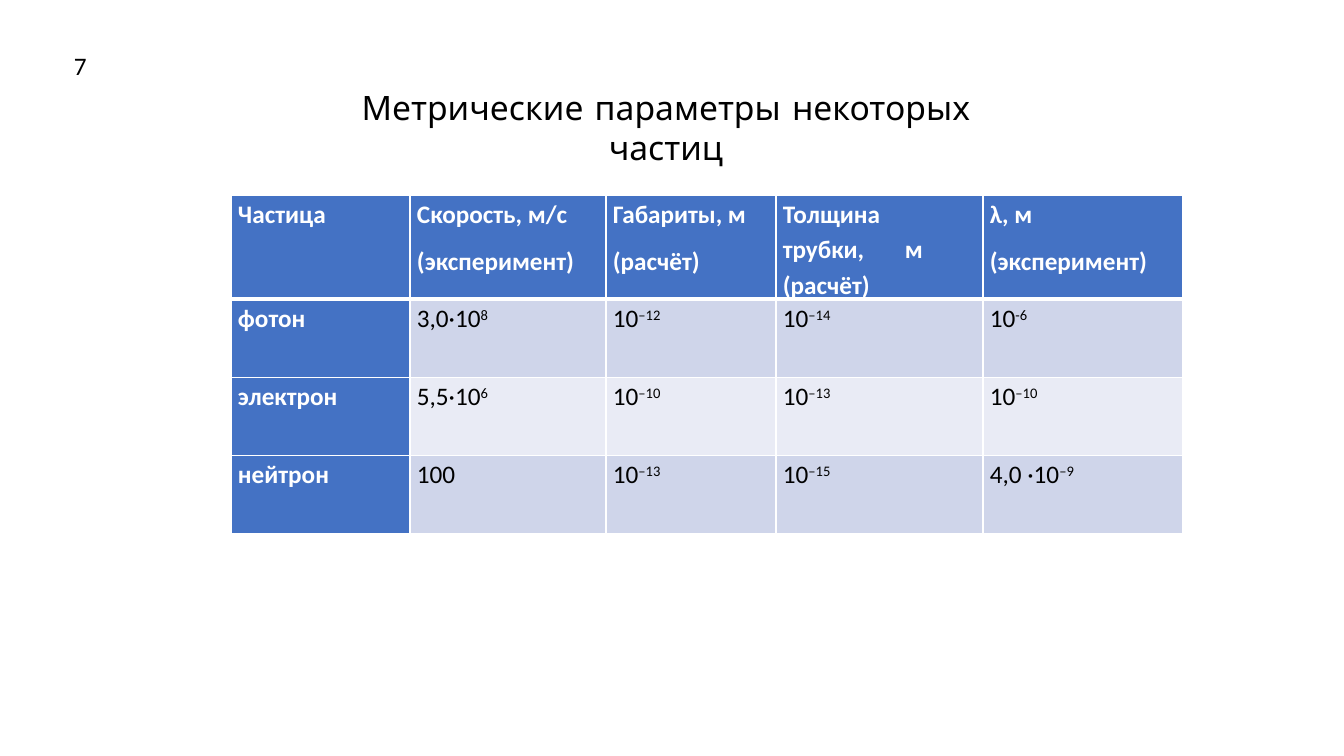
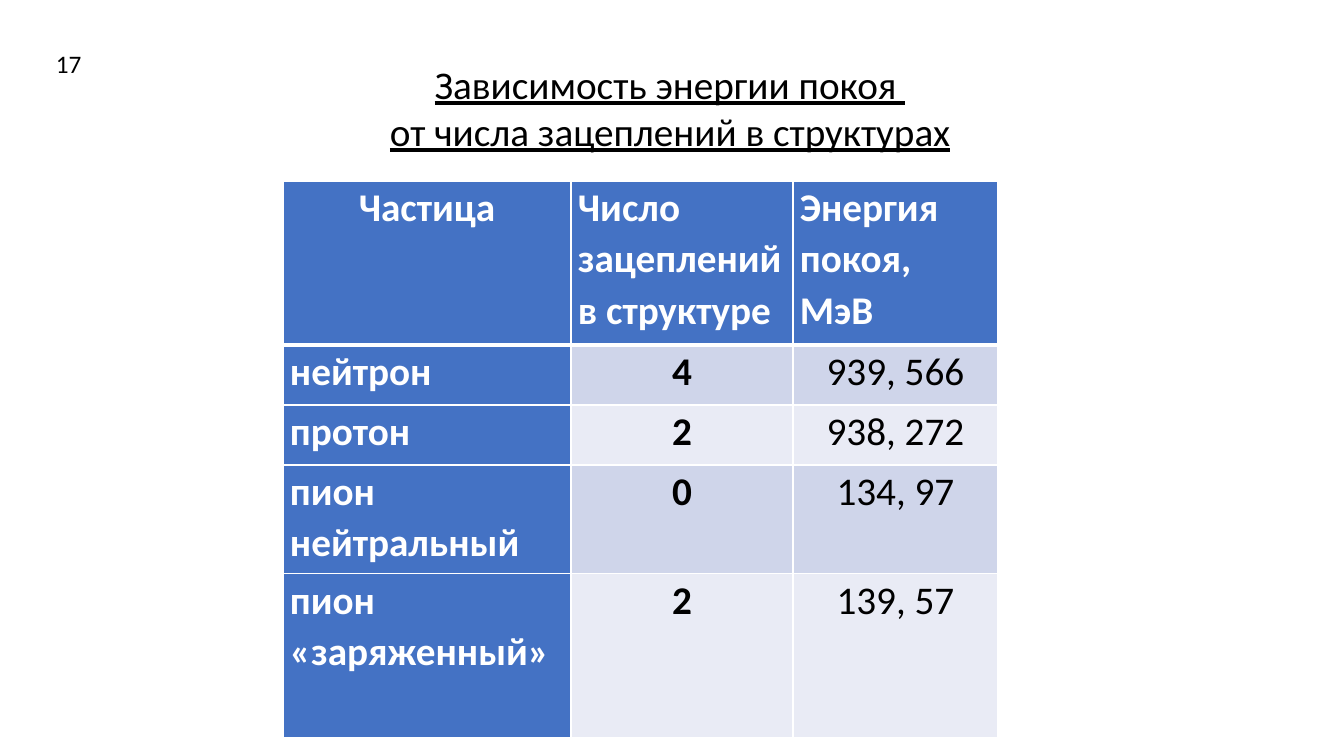
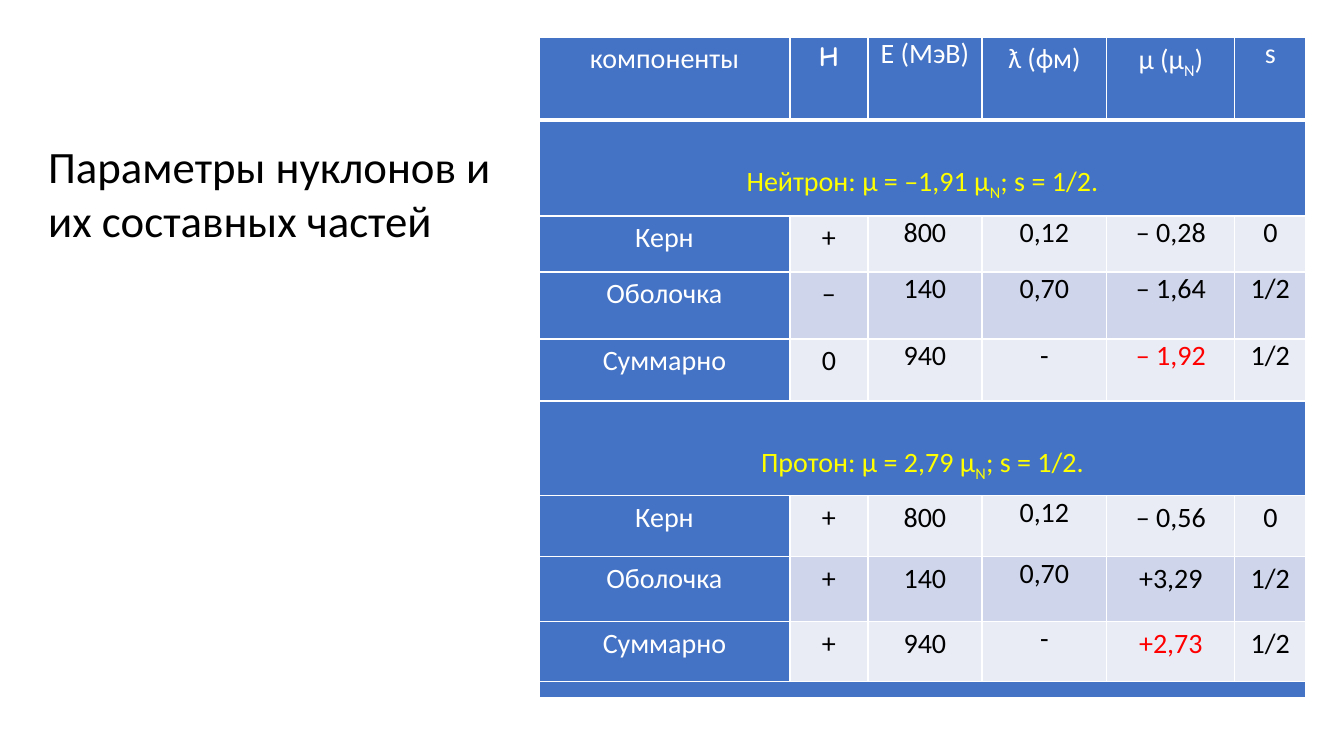
from lxml.etree import SubElement
from pptx import Presentation
from pptx.dml.color import RGBColor
from pptx.enum.text import MSO_ANCHOR, MSO_AUTO_SIZE, PP_ALIGN
from pptx.oxml import parse_xml
from pptx.oxml.ns import nsdecls, qn
from pptx.util import Pt

WHITE = RGBColor(0xFF, 0xFF, 0xFF)
BLACK = RGBColor(0x00, 0x00, 0x00)
BLUE = RGBColor(0x44, 0x72, 0xC4)
DARK_STRIPE = RGBColor(0xCF, 0xD5, 0xEA)
LIGHT_STRIPE = RGBColor(0xE9, 0xEB, 0xF5)
YELLOW = RGBColor(0xFF, 0xFF, 0x00)
RED = RGBColor(0xFF, 0x00, 0x00)

SANS, COMIC = "Calibri", "Comic Neue"
LEFT, CENTER, JUSTIFY = PP_ALIGN.LEFT, PP_ALIGN.CENTER, PP_ALIGN.JUSTIFY
EMU_PER_PX = 914400 / 100.8
SLIDE_SIZE = 1344, 756

# Content: braces mark raised or lowered text, "\n" starts a paragraph.
# A row with a single entry spans the whole table.
# Overrides are (rows, columns, formats); later ones win.
SLIDES = [
    {
        "title": "Метрические параметры некоторых частиц",
        "title_at": (297, 82, 738, 50),
        "title_format": {"name": COMIC, "size": 24, "alignment": CENTER},
        "number": "7",
        "number_at": (64, 45, 33, 40),
        "table_at": (231, 195),
        "columns": (179, 196, 170, 207, 200),
        "heights": (104, 78, 78, 78),
        "rows": [
            ("Частица", "Скорость, м/с\n(эксперимент)", "Габариты, м\n(расчёт)",
             "Толщина трубки, м (расчёт)", "λ, м\n(эксперимент)"),
            ("фотон", "3,0·10{8}", "10{–12}", "10{–14}", "10{-6}"),
            ("электрон", "5,5·10{6}", "10{–10}", "10{–13}", "10{–10}"),
            ("нейтрон", "100", "10{–13}", "10{–15}", "4,0 ·10{–9}"),
        ],
        "shift": 30,
        "margin": 7,
        "cell_format": {"size": 18, "alignment": JUSTIFY,
                        "line_spacing": 1.15, "space_after": Pt(8)},
        "overrides": [
            ([0], range(5), {"bold": True}),
            (range(4), [0], {"bold": True}),
            ([0], [3], {"margin_right": 60}),
        ],
    },
    {
        "title": "Зависимость энергии покоя \nот числа зацеплений в структурах",
        "title_at": (86, 55, 1168, 105),
        "title_format": {"size": 28, "underline": True, "alignment": CENTER},
        "number": "17",
        "number_at": (46, 43, 46, 40),
        "table_at": (283, 181),
        "columns": (288, 222, 205),
        "heights": (164, 60, 60, 109, 164),
        "rows": [
            ("Частица", "Число зацеплений в структуре", "Энергия покоя, МэВ"),
            ("нейтрон", "4", "939, 566"),
            ("протон", "2", "938, 272"),
            ("пион нейтральный", "0", "134, 97"),
            ("пион «заряженный»", "2", "139, 57"),
        ],
        "shift": 0,
        "margin": 7,
        "cell_format": {"size": 28, "bold": True, "alignment": CENTER,
                        "line_spacing": 1.07, "space_after": Pt(8)},
        "overrides": [
            ([0], [1, 2], {"alignment": LEFT}),
            (range(1, 5), [0], {"alignment": LEFT}),
            (range(1, 5), [2], {"bold": False}),
        ],
    },
    {
        "title": "Параметры нуклонов и\nих составных частей",
        "title_at": (38, 134, 476, 119),
        "title_format": {"size": 32, "alignment": LEFT},
        "table_at": (539, 37),
        "columns": (251, 78, 114, 125, 128, 71),
        "heights": (83, 96, 56, 67, 62, 95, 61, 65, 60, 16),
        "rows": [
            ("компоненты", "H", "Е (МэВ)", "ƛ (фм)", "μ (μ{N})", "s"),
            ("Нейтрон: μ = –1,91 μ{N}; s = 1/2.",),
            ("Керн", "+", "800", "0,12", "– 0,28", "0"),
            ("Оболочка", "–", "140", "0,70", "– 1,64", "1/2"),
            ("Суммарно", "0", "940", "-", "– 1,92", "1/2"),
            ("Протон: μ = 2,79 μ{N}; s = 1/2.",),
            ("Керн", "+", "800", "0,12", "– 0,56", "0"),
            ("Оболочка", "+", "140", "0,70", "+3,29", "1/2"),
            ("Суммарно", "+", "940", "-", "+2,73", "1/2"),
            ("",),
        ],
        "shift": -25,
        "margin": 4,
        "cell_format": {"size": 20, "alignment": CENTER, "line_spacing": 1.15},
        "overrides": [
            ([0], [1], {"name": COMIC, "bold": True}),
            ([0], [2, 5], {"line_spacing": 1.0}),
            ([1, 5], [0], {"color": YELLOW, "margin_top": 39}),
            (range(2, 5), range(2, 6), {"line_spacing": 1.0}),
            (range(6, 9), [3], {"line_spacing": 1.0}),
            ([4, 8], [4], {"color": RED}),
        ],
    },
]

TEXT_DEFAULTS = {"name": SANS, "size": 18, "bold": False, "color": BLACK}
PARAGRAPH_KEYS = ("alignment", "line_spacing", "space_after")
FONT_KEYS = ("name", "size", "bold", "underline")


def emu(px):
    return round(px * EMU_PER_PX)


def write(frame, text, formats, shift=0):
    """Fill a text frame, one paragraph per line."""
    formats = {**TEXT_DEFAULTS, **formats}
    formats["size"] = Pt(formats["size"])
    for i, line in enumerate(text.split("\n")):
        paragraph = frame.paragraphs[0] if i == 0 else frame.add_paragraph()
        for key in PARAGRAPH_KEYS:
            if key in formats:
                setattr(paragraph, key, formats[key])
        for j, piece in enumerate(line.replace("}", "{").split("{")):
            if not piece:
                continue
            run = paragraph.add_run()
            run.text = piece
            for key in FONT_KEYS:
                if key in formats:
                    setattr(run.font, key, formats[key])
            run.font.color.rgb = formats["color"]
            if j % 2:
                run._r.get_or_add_rPr().set("baseline", str(shift * 1000))


def place(shape, box):
    for key, px in zip(("left", "top", "width", "height"), box):
        setattr(shape, key, emu(px))


def add_borders(cell, is_header):
    """White cell borders, heavier under the header row."""
    properties = cell._tc.get_or_add_tcPr()
    for i, side in enumerate("LRTB"):
        points = 3 if is_header and side == "B" else 1
        properties.insert(i, parse_xml(
            f'<a:ln{side} {nsdecls("a")} w="{Pt(points)}"><a:solidFill>'
            f'<a:srgbClr val="{WHITE}"/></a:solidFill></a:ln{side}>'))


def add_title(slide, content):
    title = slide.shapes.title
    place(title, content["title_at"])
    frame = title.text_frame
    frame.word_wrap = True
    frame.auto_size = MSO_AUTO_SIZE.SHAPE_TO_FIT_TEXT
    frame.vertical_anchor = MSO_ANCHOR.TOP
    write(frame, content["title"], content["title_format"])


def add_number(slide, content):
    box = slide.shapes.add_textbox(*map(emu, content["number_at"]))
    box.text_frame.word_wrap = False
    write(box.text_frame, content["number"], {})


def add_particle_table(slide, content):
    rows, columns, heights = (content[k] for k in ("rows", "columns", "heights"))
    box = (*content["table_at"], sum(columns), sum(heights))
    table = slide.shapes.add_table(len(rows), len(columns), *map(emu, box)).table
    for column, width in zip(table.columns, columns):
        column.width = emu(width)
    for row, height in zip(table.rows, heights):
        row.height = emu(height)

    for r, texts in enumerate(rows):
        spans = len(texts) == 1
        for c in range(len(columns)):
            cell = table.cell(r, c)
            is_blue = r == 0 or c == 0 or spans
            formats = {"color": WHITE if is_blue else BLACK,
                       "margin_left": content["margin"], "margin_top": 0,
                       "margin_right": content["margin"], "margin_bottom": 0,
                       **content["cell_format"]}
            for in_rows, in_columns, changes in content["overrides"]:
                if r in in_rows and c in in_columns:
                    formats.update(changes)
            for side in ("left", "top", "right", "bottom"):
                key = f"margin_{side}"
                setattr(cell, key, emu(formats[key]))
            cell.fill.solid()
            stripe = DARK_STRIPE if r % 2 else LIGHT_STRIPE
            cell.fill.fore_color.rgb = BLUE if is_blue else stripe
            add_borders(cell, r == 0)
            text = texts[c] if c < len(texts) else ""
            write(cell.text_frame, text, formats, content["shift"])
            if not text:  # keeps thin rows from growing
                paragraph = cell.text_frame.paragraphs[0]._p
                SubElement(paragraph, qn("a:endParaRPr")).set("sz", "800")
        if spans:
            table.cell(r, 0).merge(table.cell(r, len(columns) - 1))


def main():
    deck = Presentation()
    deck.slide_width, deck.slide_height = map(emu, SLIDE_SIZE)
    title_only = deck.slide_layouts[5]
    for content in SLIDES:
        slide = deck.slides.add_slide(title_only)
        add_particle_table(slide, content)
        add_title(slide, content)
        if "number" in content:
            add_number(slide, content)
    deck.save("out.pptx")


if __name__ == "__main__":
    main()
